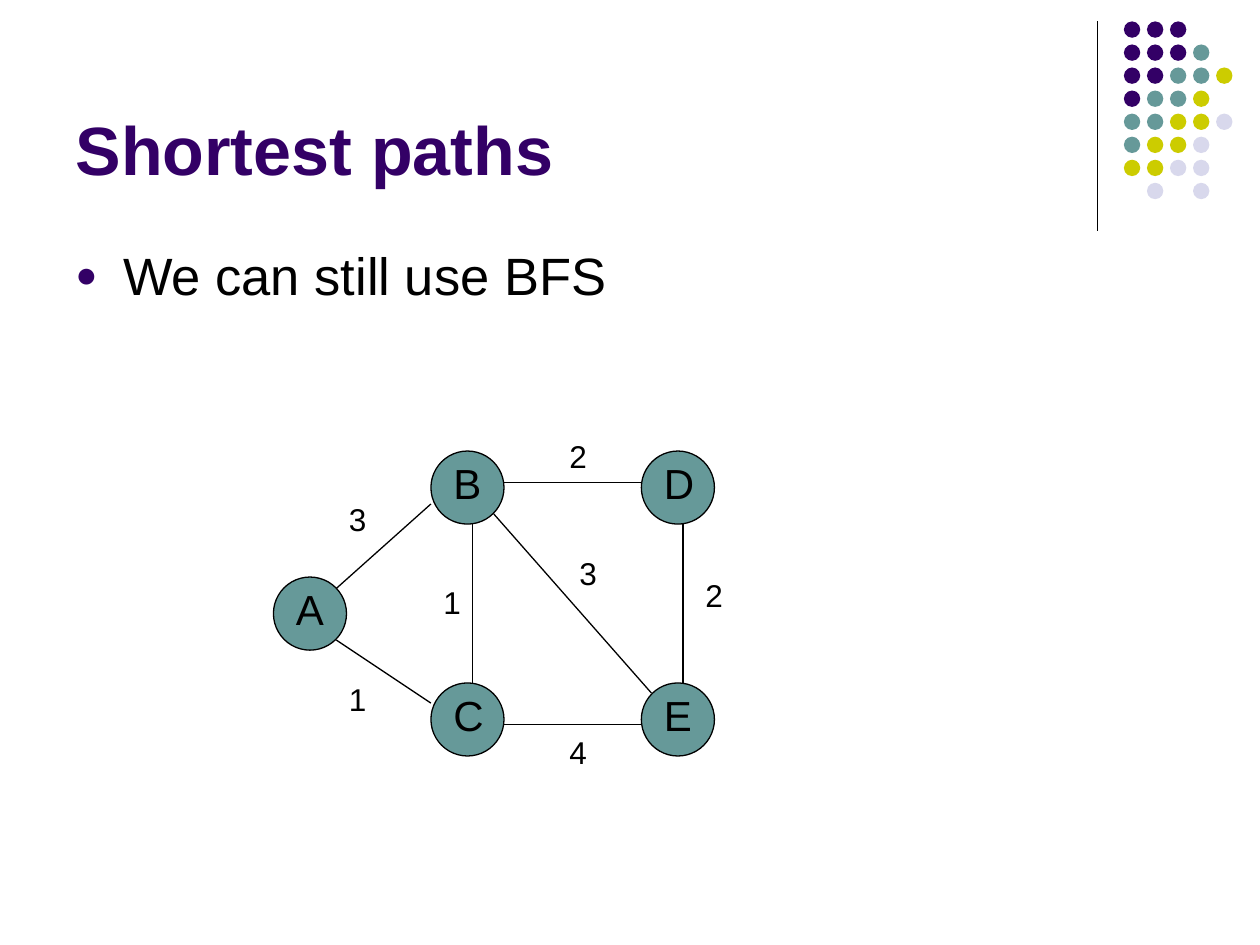
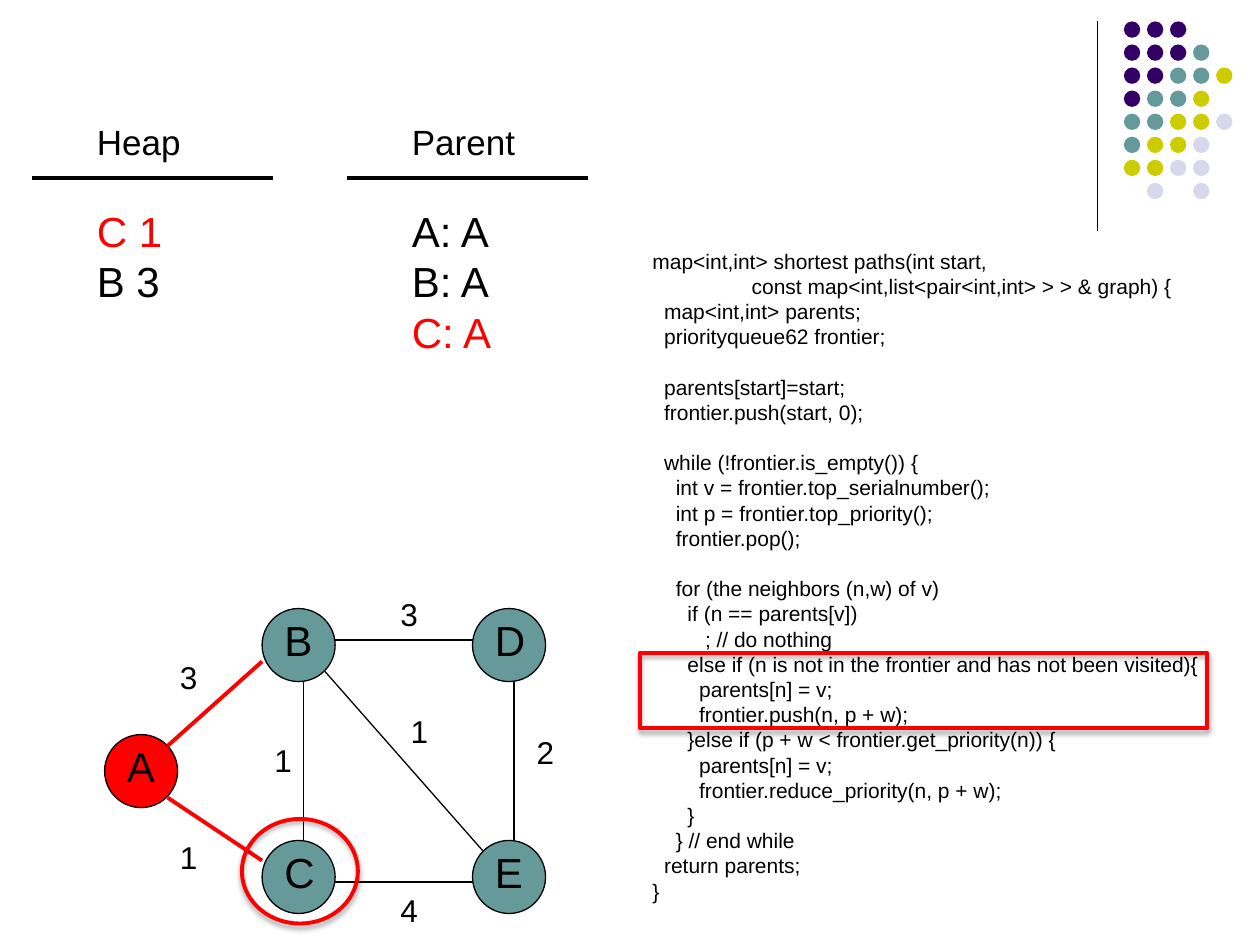
from lxml.etree import SubElement
from pptx import Presentation
from pptx.dml.color import RGBColor
from pptx.enum.shapes import MSO_CONNECTOR, MSO_SHAPE
from pptx.enum.text import MSO_ANCHOR, MSO_AUTO_SIZE, PP_ALIGN
from pptx.oxml.ns import qn
from pptx.util import Inches, Pt

COLORS = {
    "black": "000000",
    "purple": "330066",
    "teal": "669999",
    "olive": "CCCC00",
    "lavender": "D8D8EC",
    "red": "FF0000",
}
FONT = "Arial"

DOT_COLORS = {"P": "purple", "T": "teal", "O": "olive", "L": "lavender"}
DOT_ROWS = ["PPP", "PPPT", "PPTTO", "PTTO", "TTOOL", "TOOL", "OOLL", " L L"]
DOT_SIZE, DOT_STEP = 0.13, 0.183

NODE_SIZE = 0.58
NODES = {"A": (0, 1), "B": (1.25, 0), "C": (1.25, 1.84), "E": (2.92, 1.84), "D": (2.92, 0)}
EDGES = {
    "AB": (0.5, 1.09, 1.25, 0.42),
    "AC": (0.5, 1.5, 1.25, 2),
    "CE": (1.83, 2.17, 2.92, 2.17),
    "DE": (3.25, 1.84, 3.25, 0.58),
    "BC": (1.58, 1.84, 1.58, 0.58),
    "BD": (1.83, 0.25, 2.92, 0.25),
    "BE": (1.75, 0.5, 3, 1.92),
}
WEIGHT_PLACES = {
    "AC": (0.5, 1.77),
    "BC": (1.25, 1),
    "AB": (0.5, 0.34),
    "BD": (2.25, -0.16),
    "DE": (3.33, 0.94),
    "BE": (2.33, 0.77),
    "CE": (2.25, 2.19),
}

CODE = """\
map<int,int> shortest paths(int start,
                 const map<int,list<pair<int,int> > > & graph) {
  map<int,int> parents;
  priorityqueue62 frontier;

  parents[start]=start;
  frontier.push(start, 0);

  while (!frontier.is_empty()) {
    int v = frontier.top_serialnumber();
    int p = frontier.top_priority();
    frontier.pop();

    for (the neighbors (n,w) of v)
      if (n == parents[v])
         ; // do nothing
      else if (n is not in the frontier and has not been visited){
        parents[n] = v;
        frontier.push(n, p + w);
      }else if (p + w < frontier.get_priority(n)) {
        parents[n] = v;
        frontier.reduce_priority(n, p + w);
      }
    } // end while
  return parents;
}"""


def color(name):
    """Return the named colour of the deck."""
    return RGBColor.from_string(COLORS[name])


def write(para, text, size=18, ink="black", bold=False):
    """Add formatted text to a paragraph."""
    span = para.add_run()
    span.text = text
    span.font.name = FONT
    span.font.size = Pt(size)
    span.font.bold = bold
    span.font.color.rgb = color(ink)


class Painter:
    """Hold the deck style and draw on the current slide."""

    def __init__(self):
        """Start an empty deck."""
        self.deck = Presentation()
        self.deck.slide_width = Inches(10)
        self.deck.slide_height = Inches(7.5)
        self.page = None

    def new_page(self, title=None):
        """Add a slide with the corner decoration and an optional title."""
        self.page = self.deck.slides.add_slide(self.deck.slide_layouts[5 if title else 6])
        self.line(8.71, 0.17, 8.71, 1.83)
        for row, marks in enumerate(DOT_ROWS):
            for column, mark in enumerate(marks):
                if mark in DOT_COLORS:
                    self.shape(8.92 + column * DOT_STEP, 0.17 + row * DOT_STEP,
                               DOT_SIZE, DOT_SIZE, fill=DOT_COLORS[mark])
        if title:
            self.title(title)

    def title(self, text):
        """Place and format the title placeholder."""
        box = self.page.shapes.title
        box.left, box.top = Inches(0.5), Inches(0.13)
        box.width, box.height = Inches(8.25), Inches(1.42)
        frame = box.text_frame
        frame.auto_size = MSO_AUTO_SIZE.NONE
        frame.vertical_anchor = MSO_ANCHOR.BOTTOM
        para = frame.paragraphs[0]
        para.alignment = PP_ALIGN.LEFT
        write(para, text, size=39, ink="purple", bold=True)

    def shape(self, left, top, width, height, kind=MSO_SHAPE.OVAL,
              fill=None, outline=None, weight=0.75):
        """Draw a preset shape."""
        shape = self.page.shapes.add_shape(
            kind, Inches(left), Inches(top), Inches(width), Inches(height))
        shape.shadow.inherit = False
        if fill:
            shape.fill.solid()
            shape.fill.fore_color.rgb = color(fill)
        else:
            shape.fill.background()
        if outline:
            shape.line.color.rgb = color(outline)
            shape.line.width = Pt(weight)
        else:
            shape.line.fill.background()
        return shape

    def highlight(self, *place, kind=MSO_SHAPE.OVAL):
        """Draw a red frame with a soft shadow."""
        frame = self.shape(*place, kind=kind, outline="red", weight=2.25)
        effects = frame._element.spPr.find(qn("a:effectLst"))
        shadow = SubElement(effects, qn("a:outerShdw"), blurRad=str(Pt(3.1)),
                            dist=str(Pt(1.8)), dir="5400000", rotWithShape="0")
        tint = SubElement(shadow, qn("a:srgbClr"), val=COLORS["black"])
        SubElement(tint, qn("a:alpha"), val="35000")

    def line(self, x1, y1, x2, y2, ink="black", weight=0.75):
        """Draw a straight line."""
        line = self.page.shapes.add_connector(
            MSO_CONNECTOR.STRAIGHT, Inches(x1), Inches(y1), Inches(x2), Inches(y2))
        line.line.color.rgb = color(ink)
        line.line.width = Pt(weight)
        SubElement(line._element.spPr, qn("a:effectLst"))

    def text(self, left, top, width, height, *lines, size=18, inks=()):
        """Write lines in a text box and return their paragraphs."""
        box = self.page.shapes.add_textbox(
            Inches(left), Inches(top), Inches(width), Inches(height))
        frame = box.text_frame
        frame.word_wrap = True
        for index, text in enumerate(lines):
            para = frame.add_paragraph() if index else frame.paragraphs[0]
            para.line_spacing = Pt(1.2 * size)
            write(para, text, size=size, ink=inks[index] if inks else "black")
        return frame.paragraphs

    def bullet(self, left, top, width, height, text):
        """Write one bulleted line."""
        para = self.text(left, top, width, height, text, size=30)[0]
        properties = para._p.get_or_add_pPr()
        properties.set("marL", str(Inches(0.38)))
        properties.set("indent", str(Inches(-0.38)))
        tint = SubElement(properties, qn("a:buClr"))
        SubElement(tint, qn("a:srgbClr"), val=COLORS["purple"])
        SubElement(properties, qn("a:buSzPct"), val="70000")
        SubElement(properties, qn("a:buFont"), typeface=FONT)
        SubElement(properties, qn("a:buChar"), char="●")

    def code(self, left, top, width, height, source, size=12):
        """Write a listing with indents and gaps taken from its source."""
        rows = source.splitlines()
        lines = [(row, bool(index) and not rows[index - 1])
                 for index, row in enumerate(rows) if row]
        paras = self.text(left, top, width, height,
                          *(row.lstrip() for row, _ in lines), size=size)
        for para, (row, gap) in zip(paras, lines):
            depth = len(row) - len(row.lstrip())
            para._p.get_or_add_pPr().set("marL", str(Pt(depth * 0.278 * size)))
            if gap:
                para.space_before = Pt(1.2 * size)

    def graph(self, left, top, weights, visited="", active=()):
        """Draw the weighted graph with its visited nodes and active edges."""
        for name, (x, y) in NODES.items():
            self.shape(left + x, top + y, NODE_SIZE, NODE_SIZE, outline="black",
                       fill="red" if name in visited else "teal")
            self.text(left + x + 0.08, top + y, 0.5, 0.5, name, size=24)
        for name, (x1, y1, x2, y2) in EDGES.items():
            style = {"ink": "red", "weight": 2.25} if name in active else {}
            self.line(left + x1, top + y1, left + x2, top + y2, **style)
        for name, (x, y) in WEIGHT_PLACES.items():
            self.text(left + x, top + y, 0.58, 0.4, str(weights[name]))

    def column(self, left, heading, lines, inks):
        """Draw an underlined heading with its entries."""
        self.text(left, 0.91, 1.08, 0.43, heading, size=20)
        self.line(left - 0.42, 1.41, left + 1.5, 1.41, weight=2.25)
        self.text(left, 1.58, 1.17, 0.11 + 0.4 * len(lines), *lines, size=24, inks=inks)


def main():
    """Build both slides and save the deck."""
    painter = Painter()

    painter.new_page("Shortest paths")
    painter.bullet(0.5, 1.88, 9, 0.87, "We can still use BFS")
    painter.graph(2.17, 3.58,
                  {"AB": 3, "AC": 1, "BC": 1, "BD": 2, "BE": 3, "CE": 4, "DE": 2})

    painter.new_page()
    painter.graph(0.83, 4.83,
                  {"AB": 3, "AC": 1, "BC": 1, "BD": 3, "BE": 1, "CE": 4, "DE": 2},
                  visited="A", active=("AB", "AC"))
    painter.code(5.08, 1.92, 4.58, 5.35, CODE)
    painter.column(0.67, "Heap", ["C 1", "B 3"], ["red", "black"])
    painter.column(3.17, "Parent", ["A: A", "B: A", "C: A"], ["black", "black", "red"])
    painter.highlight(5.08, 5.18, 4.5, 0.6, kind=MSO_SHAPE.RECTANGLE)
    painter.highlight(1.92, 6.5, 0.92, 0.83)

    painter.deck.save("out.pptx")


if __name__ == "__main__":
    main()
